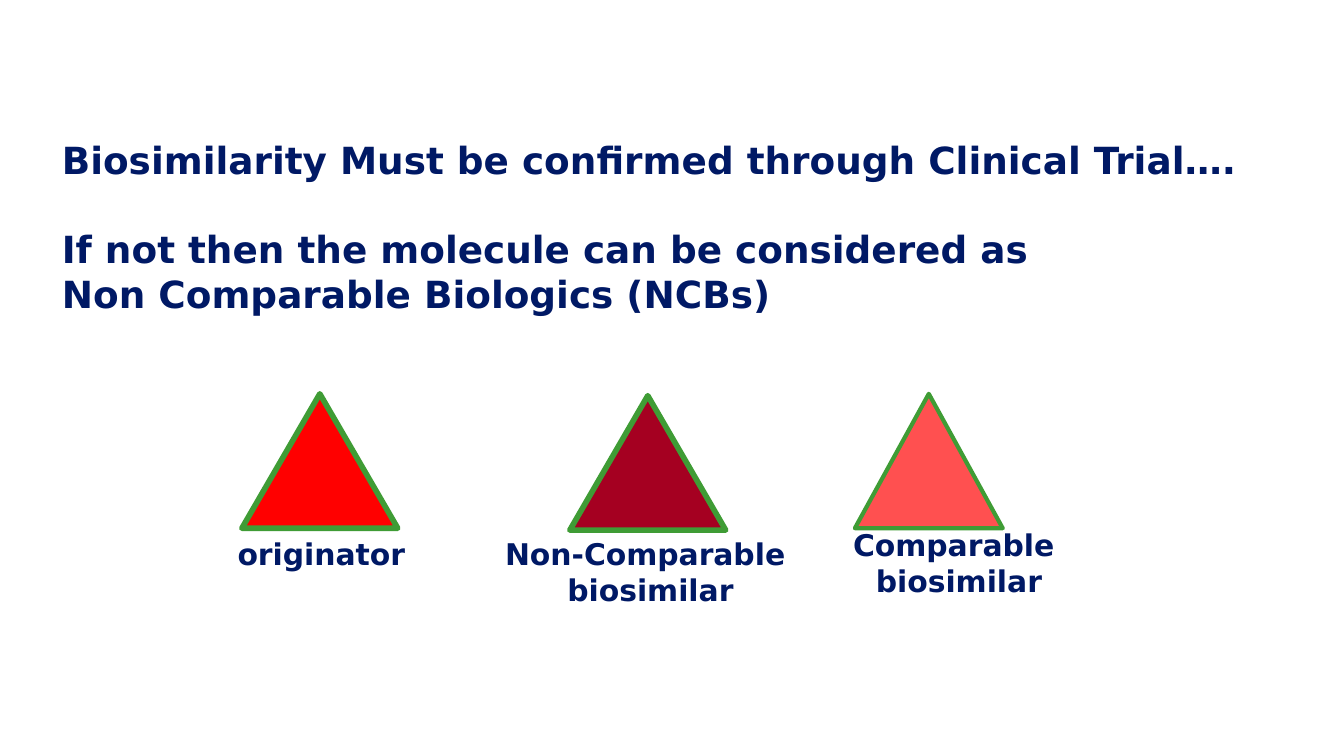
from pptx import Presentation
from pptx import util as u
from pptx.dml.color import RGBColor
from pptx.enum import shapes, text

COLORS = {
    "navy": "001965",
    "green": "3F9C35",
    "red": "FF0000",
    "crimson": "A50021",
    "coral": "FF5050",
}
TITLE_FRAME = {
    "word_wrap": True,
    "vertical_anchor": text.MSO_ANCHOR.MIDDLE,
    "margin_left": 0,
    "margin_top": 0,
    "margin_right": 0,
    "margin_bottom": 0,
}
LABEL_FRAME = {"word_wrap": False, "auto_size": text.MSO_AUTO_SIZE.SHAPE_TO_FIT_TEXT}
TITLE = [
    "Biosimilarity Must be confirmed through Clinical Trial….",
    "If not then the molecule can be considered as\vNon Comparable Biologics (NCBs)",
]
TRIANGLES = [
    ((129.6, 211, 83.5, 72), "red", 3),
    ((305.3, 212, 83.5, 72), "crimson", 3),
    ((458, 211, 79.2, 72), "coral", 2.25),
]
LABELS = [
    ((120.2, 283.7, 105.1, 26.6), ["originator"], text.PP_ALIGN.LEFT),
    ((262.1, 283.7, 172.8, 46), ["Non-Comparable ", "biosimilar"], text.PP_ALIGN.CENTER),
    ((449.3, 278.6, 128.9, 46), ["Comparable ", "biosimilar"], text.PP_ALIGN.CENTER),
]


def color(name):
    return RGBColor.from_string(COLORS[name])


def points(box):
    return [u.Pt(value) for value in box]


def set_attributes(target, values):
    for name, value in values.items():
        setattr(target, name, value)


def add_text(slide, box, lines, size, frame_format, alignment=text.PP_ALIGN.LEFT, gap=0):
    frame = slide.shapes.add_textbox(*points(box)).text_frame
    set_attributes(frame, frame_format)
    for index, line in enumerate(lines):
        paragraph = frame.add_paragraph() if index else frame.paragraphs[0]
        paragraph.text = line
        paragraph.alignment = alignment
        if index and gap:
            paragraph.space_before = u.Pt(gap)
        for run in paragraph.runs:
            set_attributes(run.font, {"name": "DejaVu Sans", "size": u.Pt(size), "bold": True})
            run.font.color.rgb = color("navy")


def add_triangle(slide, box, fill, line_width):
    shape = slide.shapes.add_shape(shapes.MSO_SHAPE.ISOSCELES_TRIANGLE, *points(box))
    shape.shadow.inherit = False
    shape.fill.solid()
    shape.fill.fore_color.rgb = color(fill)
    shape.line.color.rgb = color("green")
    shape.line.width = u.Pt(line_width)


def main():
    presentation = Presentation()
    set_attributes(presentation, {"slide_width": u.Pt(720), "slide_height": u.Pt(405)})
    slide = presentation.slides.add_slide(presentation.slide_layouts[6])
    add_text(slide, (33.1, 51.8, 644.4, 139), TITLE, 20, TITLE_FRAME, gap=23.5)
    for box, fill, line_width in TRIANGLES:
        add_triangle(slide, box, fill, line_width)
    for box, lines, alignment in LABELS:
        add_text(slide, box, lines, 16, LABEL_FRAME, alignment)
    presentation.save("out.pptx")


if __name__ == "__main__":
    main()
